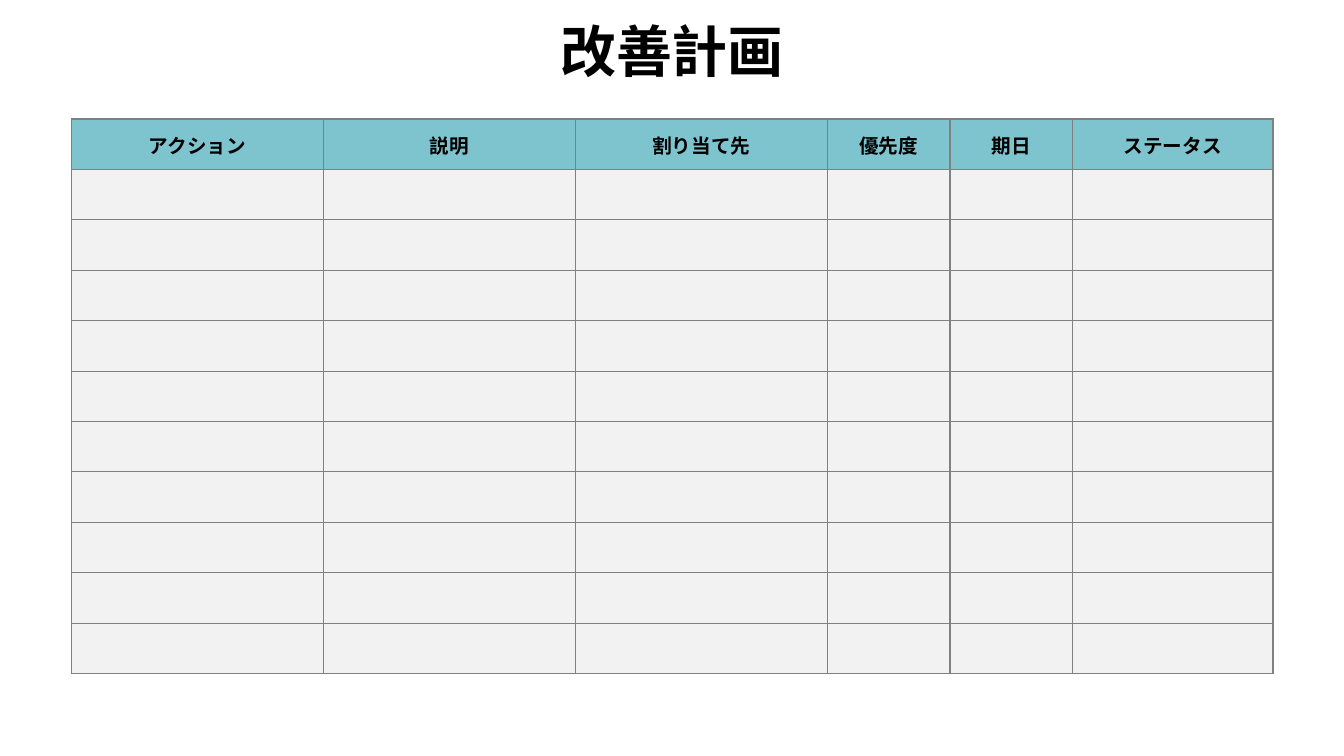
from lxml.etree import SubElement
from pptx import Presentation
from pptx.dml.color import RGBColor
from pptx.enum.text import MSO_ANCHOR as Anchor, PP_ALIGN as Align
from pptx.oxml.ns import qn
from pptx.util import Cm, Pt

TITLE = "改善計画"
COLUMNS = [  # heading, width in cm
    ("アクション", 6.35),
    ("説明", 6.35),
    ("割り当て先", 6.35),
    ("優先度", 3.09),
    ("期日", 3.09),
    ("ステータス", 5.05),
]
BLANK_ROWS = 10
ROW_HEIGHT = 1.27
LEFT, TOP = 1.8, 3
INSET = 0.25

FONT = "TeX Gyre Adventor"
BLACK = RGBColor(0x00, 0x00, 0x00)
TEAL = RGBColor(0x7E, 0xC4, 0xCF)
PALE = RGBColor(0xF2, 0xF2, 0xF2)
GREY = RGBColor(0x80, 0x80, 0x80)


def write(frame, text, size, spacing, color=BLACK):
    frame.text = text
    para = frame.paragraphs[0]
    para.alignment = Align.CENTER
    para.line_spacing = spacing
    font = para.runs[0].font
    font.name, font.size, font.bold = FONT, Pt(size), True
    font.color.rgb = color


def paint(cell, color):
    """Give a cell its four borders and then its fill."""
    props = cell._tc.get_or_add_tcPr()
    for side in ("lnL", "lnR", "lnT", "lnB"):
        line = SubElement(props, qn(f"a:{side}"), w=str(Pt(1)))
        fill = SubElement(line, qn("a:solidFill"))
        SubElement(fill, qn("a:srgbClr"), val=str(GREY))
    cell.fill.solid()
    cell.fill.fore_color.rgb = color


def add_title(slide):
    title = slide.shapes.title
    title.left, title.top = Cm(10), Cm(0)
    title.width, title.height = Cm(13.87), Cm(2.74)
    title.text_frame.vertical_anchor = Anchor.MIDDLE
    write(title.text_frame, TITLE, size=40, spacing=0.9)


def add_plan(slide):
    count = BLANK_ROWS + 1
    width = sum(size for _, size in COLUMNS)
    table = slide.shapes.add_table(
        count, len(COLUMNS), Cm(LEFT), Cm(TOP), Cm(width), Cm(ROW_HEIGHT * count)
    ).table
    for row in table.rows:
        row.height = Cm(ROW_HEIGHT)
    for col, (heading, size) in enumerate(COLUMNS):
        table.columns[col].width = Cm(size)
        for row in range(count):
            paint(table.cell(row, col), PALE if row else TEAL)
        head = table.cell(0, col)
        head.vertical_anchor = Anchor.MIDDLE
        head.margin_left = head.margin_right = Cm(INSET)
        head.margin_top = head.margin_bottom = Cm(INSET)
        write(head.text_frame, heading, size=14, spacing=1.07)


def main():
    deck = Presentation()
    deck.slide_width, deck.slide_height = Cm(33.87), Cm(19.05)
    slide = deck.slides.add_slide(deck.slide_layouts.get_by_name("Title Only"))
    add_title(slide)
    add_plan(slide)
    deck.save("out.pptx")


if __name__ == "__main__":
    main()
